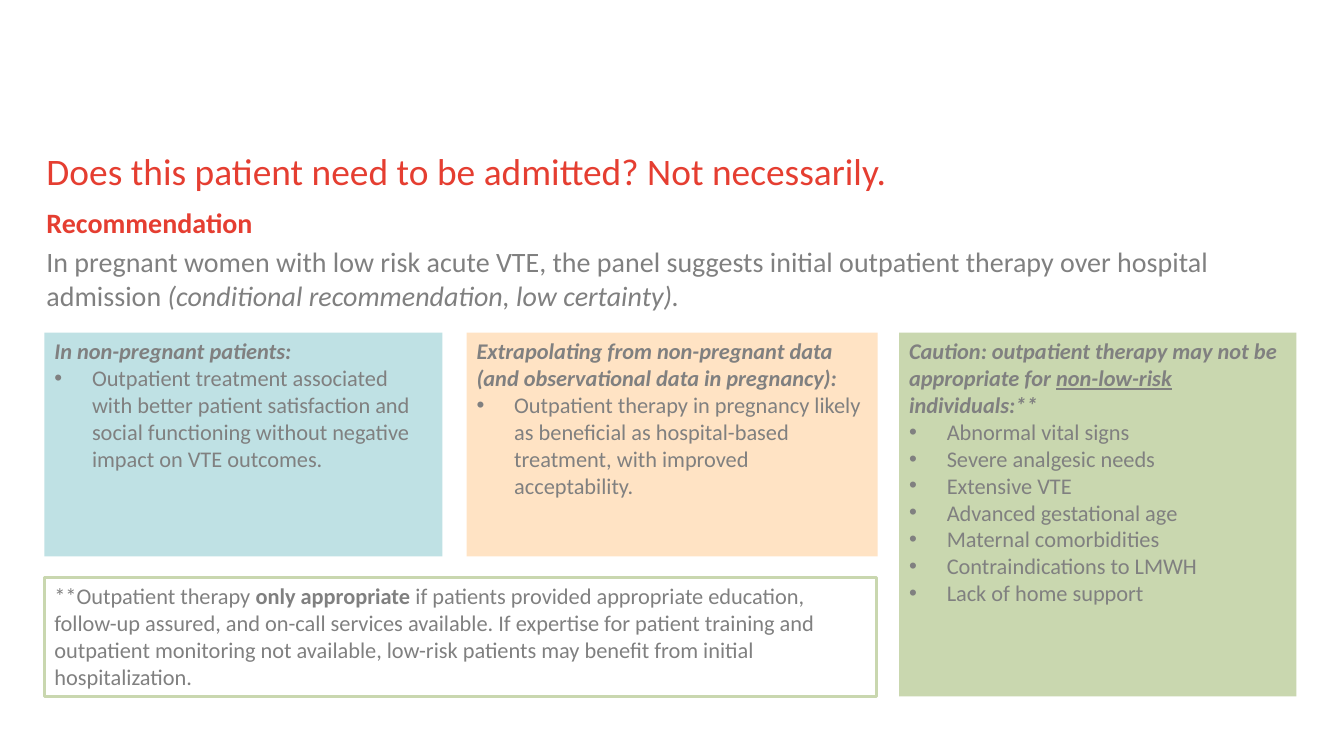
from dataclasses import dataclass

from lxml import etree
from pptx import Presentation
from pptx.dml.color import RGBColor
from pptx.enum.shapes import MSO_SHAPE
from pptx.enum.text import MSO_ANCHOR, MSO_AUTO_SIZE, PP_ALIGN
from pptx.oxml.ns import qn
from pptx.util import Cm, Pt

RECTANGLE = MSO_SHAPE.RECTANGLE
TOP = MSO_ANCHOR.TOP
LEFT = PP_ALIGN.LEFT
NO_AUTOFIT = MSO_AUTO_SIZE.NONE
TITLE_AND_CONTENT = 1


@dataclass(frozen=True)
class Theme:
    font: str = "Calibri"
    red: str = "E53E31"
    gray: str = "808080"
    blue: str = "BFE1E4"
    peach: str = "FFE3C4"
    green: str = "C9D7AF"
    title_size: float = 26.7
    body_size: float = 20
    panel_size: float = 16
    border_width: float = 2.25


THEME = Theme()

# Panel grid, in centimetres
PANEL_LEFT, PANEL_TOP = 1.12, 8.38
EVIDENCE_HEIGHT = 5.64
NOTE_TOP, NOTE_WIDTH, NOTE_HEIGHT = 14.55, 20.98, 3
CAUTION_HEIGHT = NOTE_TOP + NOTE_HEIGHT - PANEL_TOP
BULLET_INDENT = Cm(0.95)


def add_run(paragraph, text, *, size, color=THEME.gray, bold=False,
            italic=False, underline=False):
    run = paragraph.add_run()
    run.text = text
    font = run.font
    font.name, font.size = THEME.font, Pt(size)
    font.color.rgb = RGBColor.from_string(color)
    font.bold, font.italic = bold, italic
    if underline:
        font.underline = True


def next_paragraph(frame, *, bullet=False, space_before=0):
    first = frame.paragraphs[0]
    paragraph = frame.add_paragraph() if first.runs else first
    paragraph.alignment = LEFT
    paragraph.space_before = Pt(space_before)
    properties = paragraph._p.get_or_add_pPr()
    indent = BULLET_INDENT if bullet else 0
    properties.set("marL", str(indent))
    properties.set("indent", str(-indent))
    if bullet:
        typeface = etree.SubElement(properties, qn("a:buFont"))
        typeface.set("typeface", "Arial")
        etree.SubElement(properties, qn("a:buChar")).set("char", "•")
    else:
        etree.SubElement(properties, qn("a:buNone"))
    return paragraph


def prepare_placeholder(placeholder, left, top, width, height):
    placeholder.left, placeholder.top = Cm(left), Cm(top)
    placeholder.width, placeholder.height = Cm(width), Cm(height)
    frame = placeholder.text_frame
    frame.margin_left = frame.margin_right = 0
    frame.margin_top = frame.margin_bottom = 0
    frame.vertical_anchor = TOP
    frame.auto_size = NO_AUTOFIT
    frame.word_wrap = True
    return frame


def add_panel(slide, left, top, width, height, *, fill=None, border=None):
    panel = slide.shapes.add_shape(RECTANGLE, Cm(left), Cm(top), Cm(width), Cm(height))
    panel.shadow.inherit = False
    if fill:
        panel.fill.solid()
        panel.fill.fore_color.rgb = RGBColor.from_string(fill)
    else:
        panel.fill.background()
    if border:
        panel.line.color.rgb = RGBColor.from_string(border)
        panel.line.width = Pt(THEME.border_width)
    else:
        panel.line.fill.background()
    frame = panel.text_frame
    frame.word_wrap = True
    frame.vertical_anchor = TOP
    return frame


def add_list_panel(slide, left, width, height, fill, heading, items):
    frame = add_panel(slide, left, PANEL_TOP, width, height, fill=fill)
    heading_line = next_paragraph(frame)
    for text, underline in heading:
        add_run(heading_line, text, size=THEME.panel_size, bold=True,
                italic=True, underline=underline)
    for item in items:
        add_run(next_paragraph(frame, bullet=True), item, size=THEME.panel_size)


def main():
    deck = Presentation()
    deck.slide_width, deck.slide_height = Cm(33.87), Cm(19.05)
    slide = deck.slides.add_slide(deck.slide_layouts[TITLE_AND_CONTENT])

    # Question and recommendation
    question = prepare_placeholder(slide.shapes.title, 1.17, 3.73, 30.48, 1.98)
    add_run(next_paragraph(question),
            "Does this patient need to be admitted? Not necessarily.",
            size=THEME.title_size, color=THEME.red)

    recommendation = prepare_placeholder(slide.placeholders[1], 1.17, 5.18, 30.48, 11.46)
    add_run(next_paragraph(recommendation), "Recommendation",
            size=THEME.body_size, color=THEME.red, bold=True)
    advice = next_paragraph(recommendation, space_before=4)
    add_run(advice, "In pregnant women with low risk acute VTE, the panel suggests "
            "initial outpatient therapy over hospital admission ", size=THEME.body_size)
    add_run(advice, "(conditional recommendation, low certainty).",
            size=THEME.body_size, italic=True)

    # Evidence and caution panels
    add_list_panel(
        slide, PANEL_LEFT, 10.03, EVIDENCE_HEIGHT, THEME.blue,
        [("In non-pregnant patients:", False)],
        ["Outpatient treatment associated with better patient satisfaction and "
         "social functioning without negative impact on VTE outcomes."])
    add_list_panel(
        slide, 11.76, 10.36, EVIDENCE_HEIGHT, THEME.peach,
        [("Extrapolating from non-pregnant data (and observational data in "
          "pregnancy):", False)],
        ["Outpatient therapy in pregnancy likely as beneficial as hospital-based "
         "treatment, with improved acceptability."])
    add_list_panel(
        slide, 22.66, 10.01, CAUTION_HEIGHT, THEME.green,
        [("Caution: outpatient therapy may not be appropriate for ", False),
         ("non-low-risk", True), (" individuals:**", False)],
        ["Abnormal vital signs", "Severe analgesic needs", "Extensive VTE",
         "Advanced gestational age", "Maternal comorbidities",
         "Contraindications to LMWH", "Lack of home support"])

    # Conditions for outpatient therapy
    note = next_paragraph(add_panel(slide, PANEL_LEFT, NOTE_TOP, NOTE_WIDTH,
                                    NOTE_HEIGHT, border=THEME.green))
    for text, bold in [
        ("**Outpatient therapy ", False),
        ("only appropriate ", True),
        ("if patients provided appropriate education, follow-up assured, and "
         "on-call services available. If expertise for patient training and "
         "outpatient monitoring not available, low-risk patients may benefit "
         "from initial hospitalization.", False),
    ]:
        add_run(note, text, size=THEME.panel_size, bold=bold)

    deck.save("out.pptx")


if __name__ == "__main__":
    main()
